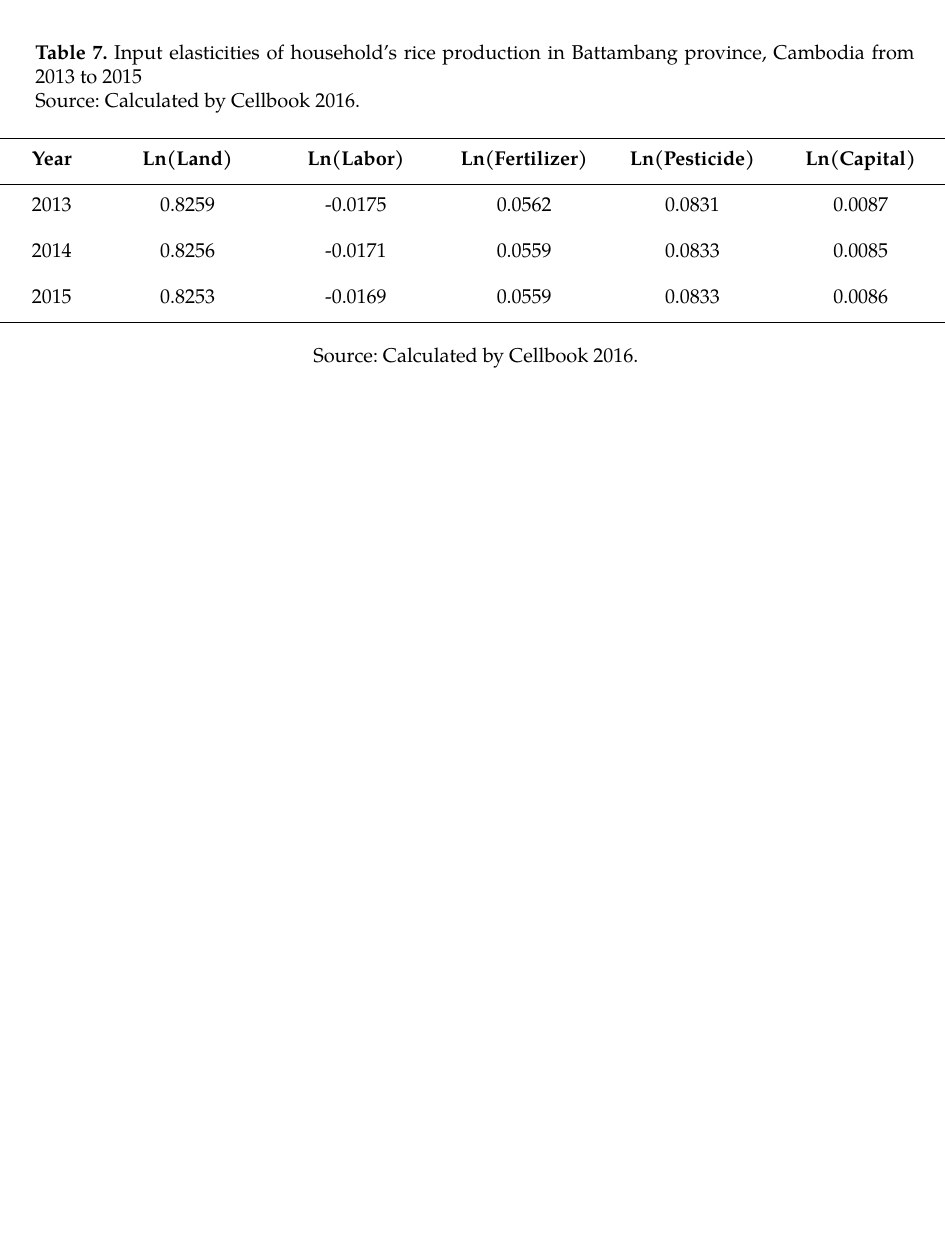
import pptx
import pptx.util
import pptx.dml.color
import pptx.enum.text
import pptx.oxml
import pptx.oxml.ns

Pt = pptx.util.Pt
ALIGN = pptx.enum.text.PP_ALIGN
MIDDLE = pptx.enum.text.MSO_ANCHOR.MIDDLE
BLACK = pptx.dml.color.RGBColor(0, 0, 0)
WIDE, HIGH = 756, 1008

SOURCE = "Source: Calculated by Cellbook 2016."
TITLE = [
    [("Table 7.", True),
     (" Input elasticities of household’s rice production in Battambang "
      "province, Cambodia from 2013 to 2015", False)],
    [(SOURCE, False)],
]
ROWS = [
    ["Year", "Ln(Land)", "Ln(Labor)", "Ln(Fertilizer)", "Ln(Pesticide)", "Ln(Capital)"],
    ["2013", "0.8259", "-0.0175", "0.0562", "0.0831", "0.0087"],
    ["2014", "0.8256", "-0.0171", "0.0559", "0.0833", "0.0085"],
    ["2015", "0.8253", "-0.0169", "0.0559", "0.0833", "0.0086"],
]


class Page:
    font = "TeX Gyre Pagella"
    size = 16
    rule = 1

    def __init__(self, slide):
        self.slide = slide

    def label(self, frame, paras, align, lead=None):
        for i, parts in enumerate(paras):
            para = frame.add_paragraph() if i else frame.paragraphs[0]
            para.alignment = align
            if lead:
                para.line_spacing = Pt(lead)
            for text, bold in parts:
                run = para.add_run()
                run.text = text
                run.font.name = self.font
                run.font.size = Pt(self.size)
                run.font.bold = bold
                run.font.color.rgb = BLACK

    def frame(self, shape):
        frame = shape.text_frame
        frame.word_wrap = True
        frame.auto_size = pptx.enum.text.MSO_AUTO_SIZE.NONE
        frame.vertical_anchor = MIDDLE
        return frame

    def title(self, left, top, width, height, paras):
        shape = self.slide.shapes.title
        shape.left, shape.top = Pt(left), Pt(top)
        shape.width, shape.height = Pt(width), Pt(height)
        self.label(self.frame(shape), paras, ALIGN.JUSTIFY)

    def note(self, left, top, width, height, text):
        shape = self.slide.shapes.add_textbox(Pt(left), Pt(top), Pt(width), Pt(height))
        self.label(self.frame(shape), [[(text, False)]], ALIGN.CENTER)

    def edge(self, cell, sides):
        props = cell._tc.get_or_add_tcPr()
        for side in "LRTB":
            fill = "<a:noFill/>"
            if side in sides:
                fill = f'<a:solidFill><a:srgbClr val="{BLACK}"/></a:solidFill>'
            props.append(pptx.oxml.parse_xml(
                f'<a:ln{side} {pptx.oxml.ns.nsdecls("a")} w="{Pt(self.rule)}">'
                f'{fill}</a:ln{side}>'))

    def table(self, top, first, height, rows):
        count, last = len(rows[0]), len(rows) - 1
        table = self.slide.shapes.add_table(
            len(rows), count, 0, Pt(top), Pt(WIDE), Pt(height * len(rows))).table
        table.first_row = table.horz_banding = False
        for c, col in enumerate(table.columns):
            col.width = Pt((WIDE - first) / (count - 1) if c else first)
        for r, row in enumerate(rows):
            table.rows[r].height = Pt(height)
            sides = {0: "TB", 1: "T", last: "B"}.get(r, "")
            for c, text in enumerate(row):
                cell = table.cell(r, c)
                cell.margin_left = cell.margin_right = Pt(5)
                cell.margin_top = cell.margin_bottom = 0
                cell.vertical_anchor = MIDDLE
                self.edge(cell, sides)
                cell.fill.background()
                self.label(cell.text_frame, [[(text, r == 0)]], ALIGN.CENTER, 15)


def main():
    deck = pptx.Presentation()
    deck.slide_width, deck.slide_height = Pt(WIDE), Pt(HIGH)
    page = Page(deck.slides.add_slide(deck.slide_layouts[5]))
    page.table(111, 82.8, 36.7, ROWS)
    page.title(21, 28, 718.5, 65.5, TITLE)
    page.note(21.5, 270, 718.5, 26.6, SOURCE)
    deck.save("out.pptx")


if __name__ == "__main__":
    main()
